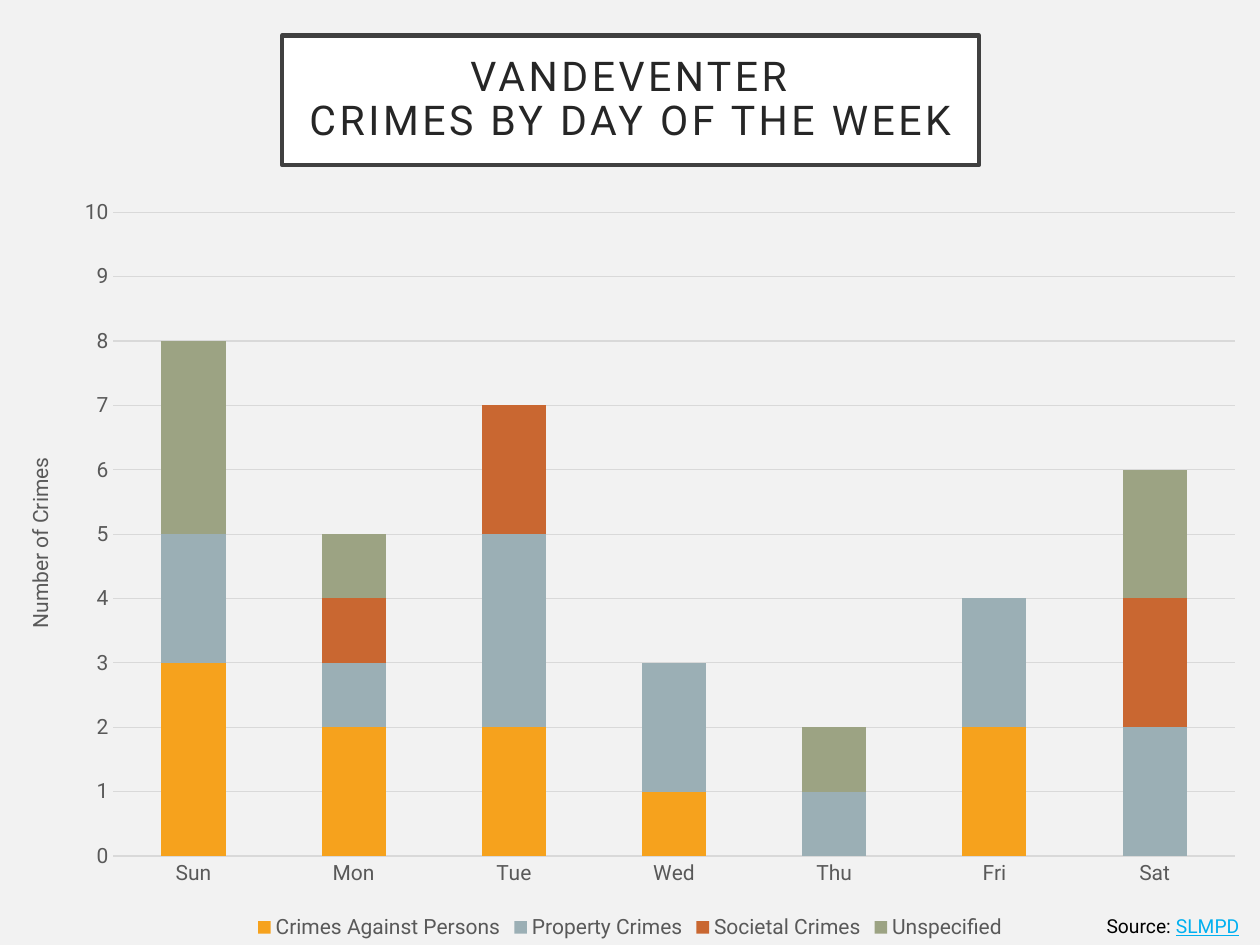
from lxml import etree
from pptx import Presentation
from pptx.chart.data import CategoryChartData
from pptx.dml.color import RGBColor
from pptx.enum.chart import XL_CHART_TYPE as ChartType, XL_LEGEND_POSITION as LegendPos
from pptx.enum.chart import XL_TICK_MARK as TickMark
from pptx.enum.text import MSO_ANCHOR as Anchor, MSO_AUTO_SIZE as AutoSize, PP_ALIGN as Align
from pptx.oxml.ns import qn
from pptx.util import Pt

FONT = "Roboto"
COLORS = {
    "background": "F2F2F2", "white": "FFFFFF", "frame": "404040", "title": "262626",
    "black": "000000", "link": "00B0F0", "label": "595959", "grid": "D9D9D9",
}
DAYS = ["Sun", "Mon", "Tue", "Wed", "Thu", "Fri", "Sat"]
CRIMES = [
    ("Crimes Against Persons", "F6A21D", (3, 2, 2, 1, 0, 2, 0)),
    ("Property Crimes", "9BAFB5", (2, 1, 3, 2, 1, 2, 2)),
    ("Societal Crimes", "C96731", (0, 1, 2, 0, 0, 0, 2)),
    ("Unspecified", "9CA383", (3, 1, 0, 0, 1, 0, 2)),
]


def rgb(name):
    return RGBColor.from_string(COLORS[name])


def place(sp, left, top, width, height):
    sp.left, sp.top, sp.width, sp.height = Pt(left), Pt(top), Pt(width), Pt(height)


def format_font(font, size, color):
    font.name, font.size, font.bold = FONT, Pt(size), False
    font.color.rgb = rgb(color)


def format_line(line, color, width):
    line.color.rgb = rgb(color)
    line.width = Pt(width)


def add_title(slide, text):
    sp = slide.shapes.title
    place(sp, 161.3, 20.2, 398, 74.2)
    sp.fill.solid()
    sp.fill.fore_color.rgb = rgb("white")
    format_line(sp.line, "frame", 2.5)
    tf = sp.text_frame
    tf.text = text
    tf.word_wrap = True
    tf.auto_size = AutoSize.NONE
    tf.vertical_anchor = Anchor.MIDDLE
    tf.margin_left = tf.margin_right = tf.margin_top = tf.margin_bottom = Pt(14.4)
    p = tf.paragraphs[0]
    p.alignment, p.line_spacing = Align.CENTER, 0.9
    for r in p.runs:
        format_font(r.font, 23.4, "title")
        r.font._element.set("spc", "200")


def add_source(slide, label, name):
    sp = slide.shapes.add_textbox(Pt(623.5), Pt(519.1), Pt(93.6), Pt(20.9))
    tf = sp.text_frame
    tf.word_wrap = True
    p = tf.paragraphs[0]
    p.alignment = Align.CENTER
    for text, color in ((label, "black"), (name, "link")):
        r = p.add_run()
        r.text = text
        format_font(r.font, 11, color)
    r.font.underline = True


def set_plot_layout(chart, **fractions):
    """Fix the inner plot area as fractions of the chart."""
    plot_area = chart._chartSpace.chart.plotArea
    for old in plot_area.findall(qn("c:layout")):
        plot_area.remove(old)
    layout = etree.Element(qn("c:layout"))
    manual = etree.SubElement(layout, qn("c:manualLayout"))
    settings = {"layoutTarget": "inner", "xMode": "edge", "yMode": "edge", **fractions}
    for tag, value in settings.items():
        etree.SubElement(manual, qn(f"c:{tag}")).set("val", str(value))
    plot_area.insert(0, layout)


def format_axes(chart):
    days, counts = chart.category_axis, chart.value_axis
    for axis in (days, counts):
        axis.major_tick_mark = axis.minor_tick_mark = TickMark.NONE
        format_font(axis.tick_labels.font, 12, "label")
    format_line(days.format.line, "grid", 0.75)
    counts.format.line.fill.background()
    counts.minimum_scale, counts.maximum_scale, counts.major_unit = 0, 10, 1
    format_line(counts.major_gridlines.format.line, "grid", 0.75)
    tf = counts.axis_title.text_frame
    tf.text = "Number of Crimes"
    format_font(tf.paragraphs[0].runs[0].font, 12, "label")


def add_crime_chart(slide):
    data = CategoryChartData()
    data.categories = DAYS
    for name, _, values in CRIMES:
        data.add_series(name, values)
    chart = slide.shapes.add_chart(
        ChartType.COLUMN_STACKED, Pt(0), Pt(105.8), Pt(720), Pt(434.2), data).chart
    format_font(chart.font, 12, "black")
    chart.has_title = False
    chart.has_legend = True
    chart.legend.position = LegendPos.BOTTOM
    chart.legend.include_in_layout = False
    format_font(chart.legend.font, 12, "label")
    format_axes(chart)
    set_plot_layout(chart, x=0.09, y=0.036, w=0.89, h=0.847)
    plot = chart.plots[0]
    plot.gap_width, plot.overlap, plot.vary_by_categories = 150, 100, False
    for series, (_, color, _) in zip(plot.series, CRIMES):
        series.format.fill.solid()
        series.format.fill.fore_color.rgb = RGBColor.from_string(color)


def main():
    prs = Presentation()
    prs.slide_width, prs.slide_height = Pt(720), Pt(540)
    slide = prs.slides.add_slide(prs.slide_layouts[5])
    slide.background.fill.solid()
    slide.background.fill.fore_color.rgb = rgb("background")
    add_title(slide, "VANDEVENTER\vCRIMES BY DAY OF THE WEEK")
    add_source(slide, "Source: ", "SLMPD")
    add_crime_chart(slide)
    prs.save("out.pptx")


if __name__ == "__main__":
    main()
